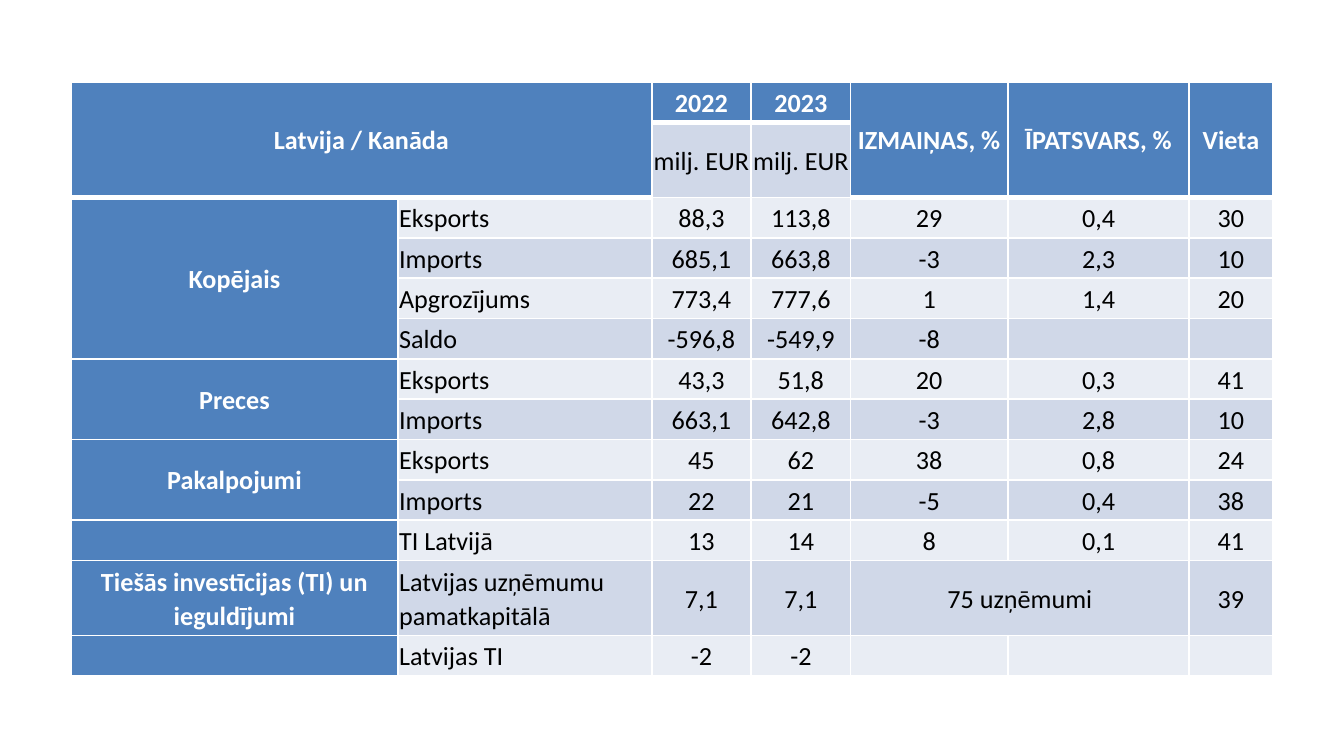
from lxml.etree import SubElement
from pptx import Presentation
from pptx.dml.color import RGBColor
from pptx.enum.text import MSO_ANCHOR, PP_ALIGN
from pptx.oxml.ns import qn
from pptx.util import Inches, Pt

WHITE = RGBColor(0xFF, 0xFF, 0xFF)
BLACK = RGBColor(0x00, 0x00, 0x00)
HEADER_BLUE = RGBColor(0x4F, 0x81, 0xBD)
BAND_DARK = RGBColor(0xD0, 0xD8, 0xE8)
BAND_LIGHT = RGBColor(0xE9, 0xED, 0xF4)

COLUMN_WIDTHS = [2.43, 1.89, 0.74, 0.74, 1.17, 1.35, 0.62]
ROW_HEIGHTS = [0.3, 0.56] + [0.3] * 9 + [0.56, 0.3]
YEAR_COLUMNS = (2, 3)
MERGES = [
    (0, 0, 1, 1), (0, 4, 1, 4), (0, 5, 1, 5), (0, 6, 1, 6),
    (2, 0, 5, 0), (6, 0, 7, 0), (8, 0, 9, 0), (11, 4, 11, 5),
]
TRADE_ROWS = [
    ["Latvija / Kanāda", "", "2022", "2023", "IZMAIŅAS, %", "ĪPATSVARS, %", "Vieta"],
    ["", "", "milj. EUR", "milj. EUR", "", "", ""],
    ["Kopējais", "Eksports", "88,3", "113,8", "29", "0,4", "30"],
    ["", "Imports", "685,1", "663,8", "-3", "2,3", "10"],
    ["", "Apgrozījums", "773,4", "777,6", "1", "1,4", "20"],
    ["", "Saldo", "-596,8", "-549,9", "-8", "", ""],
    ["Preces", "Eksports", "43,3", "51,8", "20", "0,3", "41"],
    ["", "Imports", "663,1", "642,8", "-3", "2,8", "10"],
    ["Pakalpojumi", "Eksports", "45", "62", "38", "0,8", "24"],
    ["", "Imports", "22", "21", "-5", "0,4", "38"],
    ["", "TI Latvijā", "13", "14", "8", "0,1", "41"],
    ["Tiešās investīcijas (TI) un ieguldījumi", "Latvijas uzņēmumu pamatkapitālā",
     "7,1", "7,1", "75 uzņēmumi", "", "39"],
    ["", "Latvijas TI", "-2", "-2", "", "", ""],
]


class TradeSlide:
    font_name = "Calibri"
    font_size = Pt(14)

    def __init__(self, presentation):
        self.slide = presentation.slides.add_slide(presentation.slide_layouts[6])

    def add_table(self, left, top, rows, widths, heights, merges):
        shape = self.slide.shapes.add_table(
            len(heights), len(widths), Inches(left), Inches(top),
            Inches(sum(widths)), Inches(sum(heights)))
        table = shape.table
        table.first_row = table.horz_banding = False
        for column, width in zip(table.columns, widths):
            column.width = Inches(width)
        for row, height in zip(table.rows, heights):
            row.height = Inches(height)
        for first_row, first_column, last_row, last_column in merges:
            table.cell(first_row, first_column).merge(table.cell(last_row, last_column))
        for row_index, values in enumerate(rows):
            for column_index, text in enumerate(values):
                cell = table.cell(row_index, column_index)
                self.style_cell(cell, row_index, column_index)
                self.write_cell(cell, text, row_index, column_index)

    def is_header(self, row, column):
        return row == 0 or column == 0 or (row == 1 and column not in YEAR_COLUMNS)

    def edge_width(self, row, column):
        header_end = 1 if column in YEAR_COLUMNS else 2
        return Pt(3) if row == header_end else Pt(1)

    def style_cell(self, cell, row, column):
        bottom_row = row + (cell.span_height if cell.is_merge_origin else 1)
        self.add_border(cell, "a:lnL", Pt(1))
        self.add_border(cell, "a:lnR", Pt(1))
        self.add_border(cell, "a:lnT", self.edge_width(row, column))
        self.add_border(cell, "a:lnB", self.edge_width(bottom_row, column))
        cell.fill.solid()
        band = BAND_DARK if row % 2 else BAND_LIGHT
        cell.fill.fore_color.rgb = HEADER_BLUE if self.is_header(row, column) else band
        cell.vertical_anchor = MSO_ANCHOR.MIDDLE
        cell.margin_left = cell.margin_right = Inches(0.01)
        cell.margin_top = cell.margin_bottom = 0

    def add_border(self, cell, tag, width):
        properties = cell._tc.get_or_add_tcPr()
        line = SubElement(properties, qn(tag), w=str(width))
        fill = SubElement(line, qn("a:solidFill"))
        SubElement(fill, qn("a:srgbClr"), val=str(WHITE))

    def write_cell(self, cell, text, row, column):
        paragraph = cell.text_frame.paragraphs[0]
        if not text:
            SubElement(paragraph._p, qn("a:endParaRPr"), sz=str(int(self.font_size.pt * 100)))
            return
        paragraph.text = text
        paragraph.line_spacing = 1.07
        paragraph.space_after = Pt(8)
        is_label = column == 1 and row > 1
        paragraph.alignment = PP_ALIGN.LEFT if is_label else PP_ALIGN.CENTER
        header = self.is_header(row, column)
        font = paragraph.runs[0].font
        font.name = self.font_name
        font.size = self.font_size
        font.bold = header
        font.color.rgb = WHITE if header else BLACK


def main():
    presentation = Presentation()
    presentation.slide_width = Inches(10)
    presentation.slide_height = Inches(10 * 9 / 16)
    trade_slide = TradeSlide(presentation)
    trade_slide.add_table(0.53, 0.61, TRADE_ROWS, COLUMN_WIDTHS, ROW_HEIGHTS, MERGES)
    presentation.save("out.pptx")


if __name__ == "__main__":
    main()
